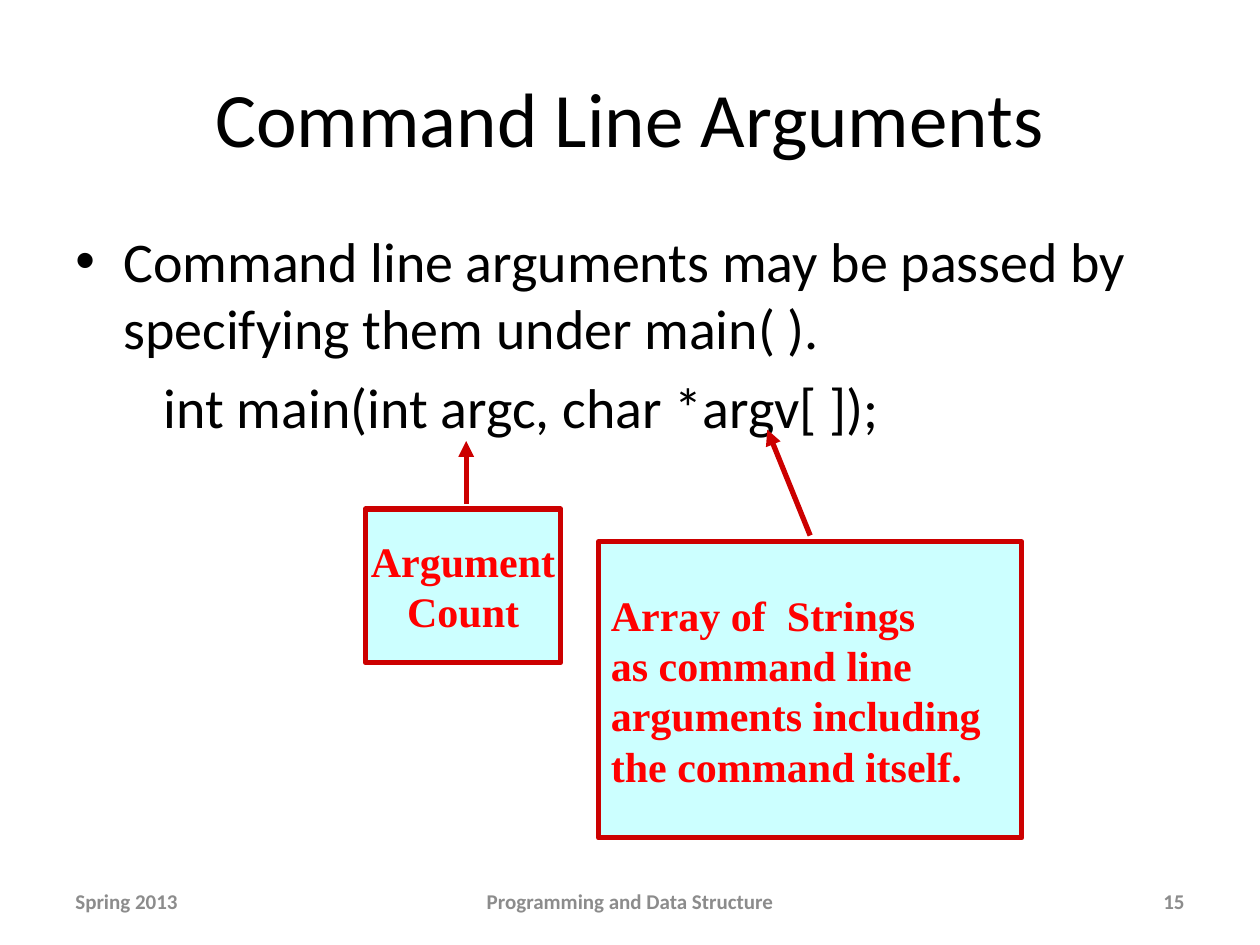
import pptx
import pptx.util
import pptx.dml.color
import pptx.enum.shapes
import pptx.enum.text
from pptx.oxml.ns import qn
from lxml import etree

Inches, Pt = pptx.util.Inches, pptx.util.Pt
RGBColor = pptx.dml.color.RGBColor
ALIGN = pptx.enum.text.PP_ALIGN
ANCHOR = pptx.enum.text.MSO_ANCHOR

BLACK = RGBColor(0x00, 0x00, 0x00)
GREY = RGBColor(0x8C, 0x8C, 0x8C)
CYAN = RGBColor(0xCC, 0xFF, 0xFF)
CRIMSON = RGBColor(0xCC, 0x00, 0x00)
RED = RGBColor(0xFF, 0x00, 0x00)

WIDE, HIGH = 10, 7.5
EDGE = 0.05 * WIDE
SPAN = WIDE - 2 * EDGE


def style(para, size, color, align=ALIGN.LEFT, face="Calibri", bold=False):
    para.alignment = align
    font = para.font
    font.name, font.size, font.bold = face, Pt(size), bold
    font.color.rgb = color


def add_text(slide, box, text, size, color, align=ALIGN.LEFT,
             anchor=ANCHOR.MIDDLE, bold=False):
    frame = slide.shapes.add_textbox(*map(Inches, box)).text_frame
    frame.word_wrap = True
    frame.vertical_anchor = anchor
    frame.text = text
    for para in frame.paragraphs:
        style(para, size, color, align, bold=bold)
    return frame


def add_body(slide, box):
    frame = add_text(
        slide, box,
        "Command line arguments may be passed by specifying them under main( ).\n"
        "int main(int argc, char *argv[ ]);",
        32, BLACK, anchor=ANCHOR.TOP)
    point, code = frame.paragraphs
    # Hanging bullet, then a code line set further in
    for para, left, first in ((point, 0.38, -0.38), (code, 0.7, 0)):
        para.space_before = Pt(6.4)
        props = para._p.get_or_add_pPr()
        props.set("marL", str(Inches(left)))
        props.set("indent", str(Inches(first)))
    props = point._p.get_or_add_pPr()
    bullet = etree.Element(qn("a:buChar"), char="•")
    props.insert_element_before(bullet, "a:tabLst", "a:defRPr", "a:extLst")
    face = etree.Element(qn("a:buFont"), typeface="Arial")
    bullet.addprevious(face)


def add_foot(slide, box):
    left, top, width, height = box
    side, mid = 0.26 * width, 0.35 * width
    parts = (
        (left, side, "Spring 2013", ALIGN.LEFT),
        (left + (width - mid) / 2, mid, "Programming and Data Structure",
         ALIGN.CENTER),
        (left + width - side, side, "15", ALIGN.RIGHT),
    )
    for x, w, text, align in parts:
        add_text(slide, (x, top, w, height), text, 12, GREY, align, bold=True)


def add_note(slide, box, text, align, start, tip):
    """Framed note with an arrow; start and tip are offsets from the box."""
    left, top, width, height = box
    note = slide.shapes.add_shape(
        pptx.enum.shapes.MSO_SHAPE.RECTANGLE, *map(Inches, box))
    note.shadow.inherit = False
    note.fill.solid()
    note.fill.fore_color.rgb = CYAN
    note.line.color.rgb = CRIMSON
    note.line.width = Pt(3)
    frame = note.text_frame
    frame.word_wrap = False
    frame.vertical_anchor = ANCHOR.MIDDLE
    frame.text = text
    for para in frame.paragraphs:
        style(para, 24, RED, align, "Times New Roman", True)

    # Arrow up to the parameter
    ends = [Inches(v) for dx, dy in (start, tip) for v in (left + dx, top + dy)]
    arrow = slide.shapes.add_connector(
        pptx.enum.shapes.MSO_CONNECTOR.STRAIGHT, *ends)
    arrow.line.color.rgb = CRIMSON
    arrow.line.width = Pt(3)
    etree.SubElement(arrow.line._get_or_add_ln(), qn("a:tailEnd"),
                     type="triangle")
    etree.SubElement(arrow._element.spPr, qn("a:effectLst"))


def main():
    deck = pptx.Presentation()
    deck.slide_width, deck.slide_height = Inches(WIDE), Inches(HIGH)
    slide = deck.slides.add_slide(deck.slide_layouts[6])

    # Title, body and footer
    add_text(slide, (EDGE, 0.04 * HIGH, SPAN, 1.25),
             "Command Line Arguments", 44, BLACK, ALIGN.CENTER)
    add_body(slide, (EDGE, 1.75, SPAN, 0.66 * HIGH))
    add_foot(slide, (EDGE, 6.95, SPAN, 0.4))

    # Notes on the two parameters
    add_note(slide, (2.9, 4.04, 1.55, 1.22), "Argument\nCount",
             ALIGN.CENTER, (0.8, -0.04), (0.8, -0.54))
    add_note(slide, (4.75, 4.3, 3.36, 2.35),
             "Array of  Strings\nas command line\n"
             "arguments including\nthe command itself.",
             ALIGN.LEFT, (1.68, -0.05), (1.34, -0.89))

    deck.save("out.pptx")


if __name__ == "__main__":
    main()
